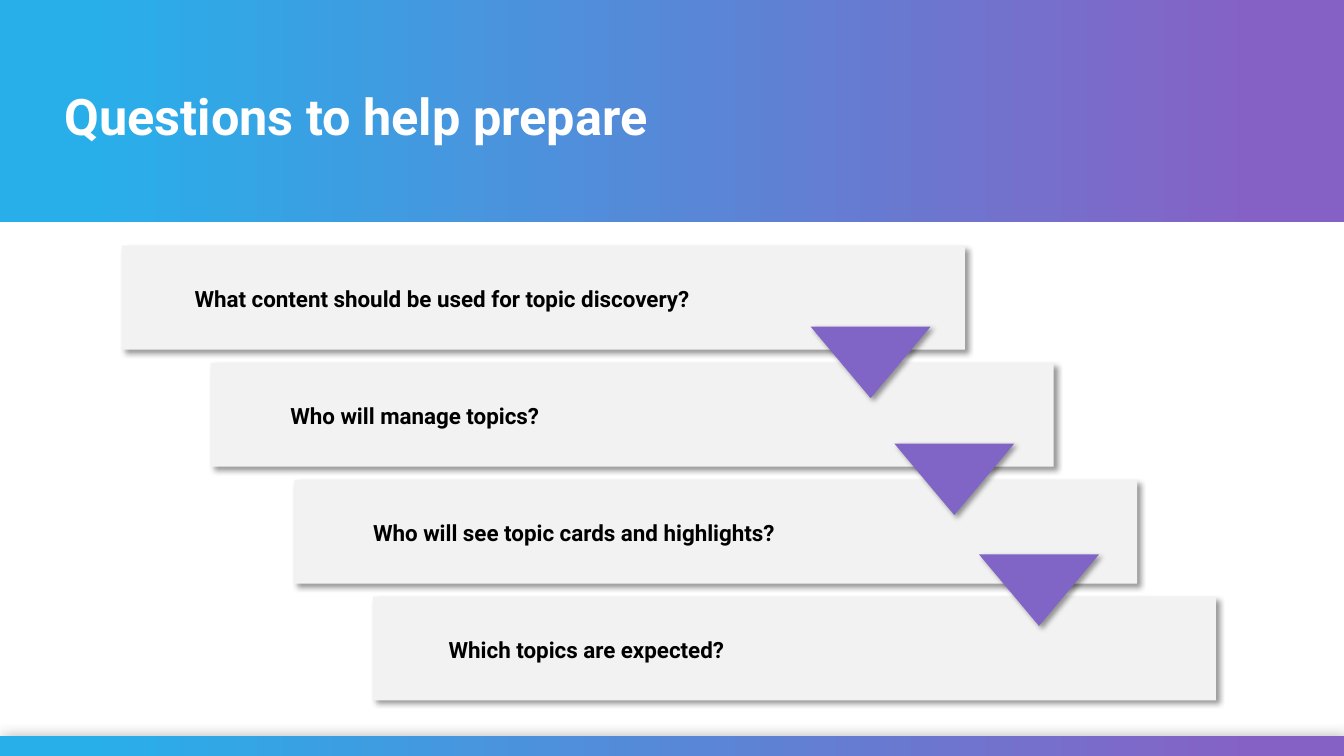
"""Build the slide of four stepped questions that help prepare topics."""
from dataclasses import dataclass

from lxml import etree
from pptx import Presentation
from pptx import util as u
from pptx.dml.color import RGBColor
from pptx.enum import shapes, text
from pptx.oxml import ns

FONT = "Roboto"
HUES = {
    "sky": "28AFEA",
    "plum": "8661C5",
    "arrow": "8065C7",
    "card": "F2F2F2",
    "ink": "000000",
    "white": "FFFFFF",
}
WIDE, HIGH = 13.33, 7.5
TOP, STEP = 2.44, 1.16


@dataclass
class Box:
    left: float
    top: float
    width: float
    height: float

    def place(self) -> tuple:
        return tuple(u.Inches(n) for n in (self.left, self.top, self.width, self.height))


@dataclass
class Card:
    left: float
    indent: float
    width: float
    label: str


CARDS = [
    Card(1.21, 1.93, 6.09, "What content should be used for topic discovery?"),
    Card(2.09, 2.88, 4.78, "Who will manage topics?"),
    Card(2.92, 3.7, 4.78, "Who will see topic cards and highlights?"),
    Card(3.7, 4.45, 4.78, "Which topics are expected?"),
]
ARROWS = [Box(8.04, 3.24, 1.19, 0.71), Box(8.87, 4.4, 1.19, 0.71), Box(9.71, 5.5, 1.19, 0.71)]


def paint(name: str) -> RGBColor:
    return RGBColor.from_string(HUES[name])


def add_shade(shape, blur: float) -> None:
    effects = shape.element.spPr.find(ns.qn("a:effectLst"))
    shade = etree.SubElement(
        effects, ns.qn("a:outerShdw"), blurRad=str(u.Pt(blur)), dist=str(u.Pt(3)),
        dir="2700000", algn="tl", rotWithShape="0",
    )
    hue = etree.SubElement(shade, ns.qn("a:srgbClr"), val=HUES["ink"])
    etree.SubElement(hue, ns.qn("a:alpha"), val="40000")


def add_block(slide, kind, box: Box, blur: float = 0):
    shape = slide.shapes.add_shape(kind, *box.place())
    shape.shadow.inherit = False
    shape.line.fill.background()
    if blur:
        add_shade(shape, blur)
    return shape


def add_solid(slide, kind, box: Box, hue: str):
    shape = add_block(slide, kind, box, 4)
    shape.fill.solid()
    shape.fill.fore_color.rgb = paint(hue)
    return shape


def add_band(slide, box: Box, blur: float = 0) -> None:
    band = add_block(slide, shapes.MSO_SHAPE.RECTANGLE, box, blur)
    band.fill.gradient()
    band.fill.gradient_angle = 0
    for stop, hue, spot in zip(band.fill.gradient_stops, ("sky", "plum"), (0.06, 0.94)):
        stop.color.rgb = paint(hue)
        stop.position = spot


def add_label(slide, box: Box, words: str, size: float, hue: str, anchor, inset: float = 0) -> None:
    frame = slide.shapes.add_textbox(*box.place()).text_frame
    frame.word_wrap = True
    frame.vertical_anchor = anchor
    frame.margin_left = frame.margin_right = frame.margin_bottom = 0
    frame.margin_top = u.Inches(inset)
    frame.text = words
    font = frame.paragraphs[0].runs[0].font
    font.name = FONT
    font.size = u.Pt(size)
    font.bold = True
    font.color.rgb = paint(hue)


def main() -> None:
    deck = Presentation()
    deck.slide_width, deck.slide_height = u.Inches(WIDE), u.Inches(HIGH)
    slide = deck.slides.add_slide(deck.slide_layouts[6])
    add_band(slide, Box(0, 0, WIDE, 2.2))
    add_band(slide, Box(0, 7.3, WIDE, 0.2), 12)
    add_label(slide, Box(0.64, 0.77, 12.05, 0.68), "Questions to help prepare", 36, "white",
              text.MSO_ANCHOR.TOP, 0.07)
    for row, card in enumerate(CARDS):
        add_solid(slide, shapes.MSO_SHAPE.RECTANGLE,
                  Box(card.left, TOP + row * STEP, 8.36, 1.03), "card")
    for box in ARROWS:
        add_solid(slide, shapes.MSO_SHAPE.ISOSCELES_TRIANGLE, box, "arrow").rotation = 180
    for row, card in enumerate(CARDS):
        add_label(slide, Box(card.indent, TOP + 0.39 + row * STEP, card.width, 0.27),
                  card.label, 16, "ink", text.MSO_ANCHOR.MIDDLE)
    deck.save("out.pptx")


if __name__ == "__main__":
    main()
